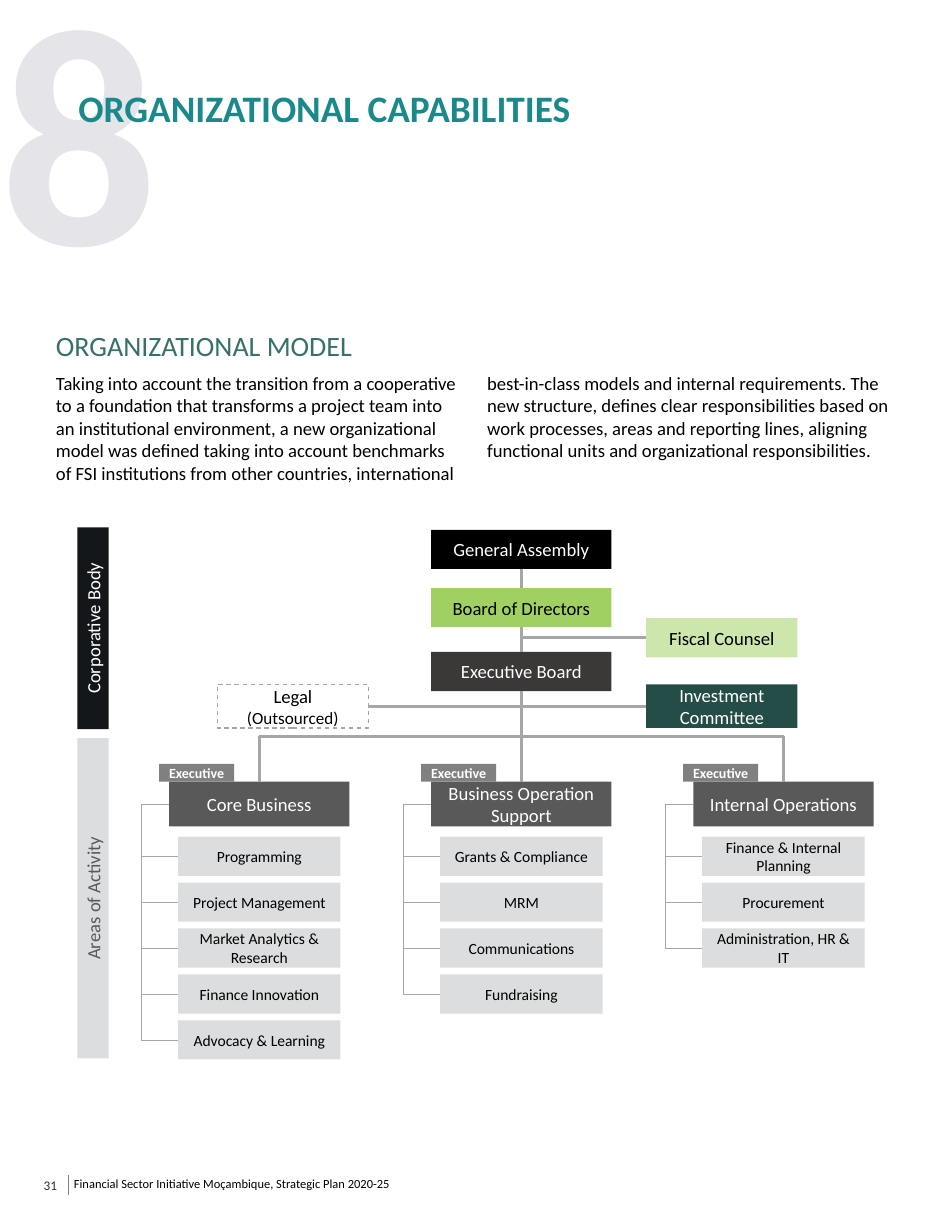
from lxml import etree
from pptx import Presentation
from pptx.dml.color import RGBColor
from pptx.enum.dml import MSO_LINE
from pptx.enum.shapes import MSO_CONNECTOR, MSO_SHAPE
from pptx.enum.text import MSO_ANCHOR, MSO_AUTO_SIZE, PP_ALIGN
from pptx.oxml.ns import qn
from pptx.util import Inches, Pt

STRAIGHT, ELBOW = MSO_CONNECTOR.STRAIGHT, MSO_CONNECTOR.ELBOW
TOP, MIDDLE = MSO_ANCHOR.TOP, MSO_ANCHOR.MIDDLE
LEFT, CENTER = PP_ALIGN.LEFT, PP_ALIGN.CENTER
WIDTH, HEIGHT = 8.5, 11
FONT, RULE = "Calibri", "A6A6A6"
BLACK, WHITE, PALE = "000000", "FFFFFF", "DCDDDE"
BOX_WIDTH, BOX_HEIGHT, SIDE_WIDTH = 1.61, 0.35, 1.35
COLUMN_STEP, ROW_STEP, UNIT_HEIGHT = 2.34, 0.41, 0.4

BODY = (
    "Taking into account the transition from a cooperative to a foundation that transforms "
    "a project team into an institutional environment, a new organizational model was defined "
    "taking into account benchmarks of FSI institutions from other countries, international "
    "best-in-class models and internal requirements. The new structure, defines clear "
    "responsibilities based on work processes, areas and reporting lines, aligning functional "
    "units and organizational responsibilities."
)
UNITS = [
    ("Core Business", ["Programming", "Project Management", "Market Analytics & Research",
                       "Finance Innovation", "Advocacy & Learning"]),
    ("Business Operation Support", ["Grants & Compliance", "MRM", "Communications", "Fundraising"]),
    ("Internal Operations", ["Finance & Internal Planning", "Procurement", "Administration, HR & IT"]),
]


def color(value):
    return RGBColor.from_string(value)


def write(shape, text, size, ink, bold=False, align=LEFT, anchor=TOP, margins=(0, 0, 0, 0)):
    frame = shape.text_frame
    frame.text = text
    frame.word_wrap = True
    frame.auto_size = MSO_AUTO_SIZE.NONE
    frame.vertical_anchor = anchor
    frame.margin_left, frame.margin_top, frame.margin_right, frame.margin_bottom = map(Inches, margins)
    para = frame.paragraphs[0]
    para.alignment = align
    for span in para.runs:
        span.font.name, span.font.size, span.font.bold = FONT, Pt(size), bold
        span.font.color.rgb = color(ink)
    return frame


def label(page, box, text, size, ink, **style):
    shape = page.shapes.add_textbox(*map(Inches, box))
    return write(shape, text, size, ink, **style)


def block(page, box, text, fill, ink=WHITE, size=12, bold=False, margins=(0.1, 0.05, 0.1, 0.05)):
    shape = page.shapes.add_shape(MSO_SHAPE.RECTANGLE, *map(Inches, box))
    shape.shadow.inherit = False
    shape.line.fill.background()
    if fill:
        shape.fill.solid()
        shape.fill.fore_color.rgb = color(fill)
    else:
        shape.fill.background()
    write(shape, text, size, ink, bold, CENTER, MIDDLE, margins)
    return shape


def link(page, kind, start, end, width=0, ink=RULE):
    line = page.shapes.add_connector(kind, *map(Inches, (*start, *end)))
    line.line.color.rgb = color(ink)
    line.line.width = Pt(width)
    etree.SubElement(line._element.spPr, qn("a:effectLst"))
    return line


def join(page, upper, lower):
    line = link(page, STRAIGHT, (0, 0), (1, 1))
    line.begin_connect(upper, 2)
    line.end_connect(lower, 0)


def drop(page, start, end, preset="bentConnector3"):
    across, down = end[0] - start[0], end[1] - start[1]
    middle_x, middle_y = start[0] + across / 2, start[1] + down / 2
    half = down / 2 if across < 0 else -down / 2
    line = link(page, ELBOW, (middle_x - half, middle_y - abs(across) / 2),
                (middle_x + half, middle_y + abs(across) / 2))
    properties = line._element.spPr
    properties.find(qn("a:xfrm")).set("rot", str((90 if across < 0 else 270) * 60000))
    properties.find(qn("a:prstGeom")).set("prst", preset)


def bracket(page, start, end, reach):
    line = link(page, ELBOW, start, end, 0.25)
    guides = line._element.spPr.find(qn("a:prstGeom")).get_or_add_avLst()
    share = round(-reach / (end[0] - start[0]) * 100000)
    etree.SubElement(guides, qn("a:gd"), name="adj1", fmla=f"val {share}")


def heading(page, box):
    frame = label(page, (0, -0.59, 3.85, 2.82), "8", 200, "797991", bold=True)
    tint = frame._txBody.find(".//" + qn("a:srgbClr"))
    etree.SubElement(tint, qn("a:alpha"), val="20000")
    title = page.shapes.title
    title.left, title.top, title.width, title.height = map(Inches, box)
    write(title, "ORGANIZATIONAL CAPABILITIES", 24, "1A898B", bold=True)
    page.shapes._spTree.append(title._element)


def introduction(page, box):
    left, top, width, height = box
    label(page, (left, top, width, 0.38), "ORGANIZATIONAL MODEL", 18, "377169")
    frame = label(page, (left, top + 0.39, width, height - 0.39), BODY, 12, BLACK)
    settings = frame._txBody.bodyPr
    settings.set("numCol", "2")
    settings.set("spcCol", str(Inches(0.2)))


def side_bars(page, box):
    left, top, width, height = box
    for text, offset, length, fill, ink in (
        ("Corporative Body", 0, 1.8, "14171A", WHITE),
        ("Areas of Activity", 1.88, height - 1.88, PALE, "595959"),
    ):
        bar = block(page, (left, top + offset, width, length), text, fill, ink)
        bar.text_frame._txBody.bodyPr.set("vert", "vert270")


def unit(page, box, name, areas):
    left, top, width, height = box
    head = block(page, (left, top, width, height), name, "595959")
    area_left, start = left + 0.08, (left, top + height / 2)
    for row, area in enumerate(areas):
        area_top = top + 0.49 + row * ROW_STEP
        block(page, (area_left, area_top, 1.45, BOX_HEIGHT), area, PALE, BLACK, 10)
        bracket(page, start, (area_left, area_top + BOX_HEIGHT / 2), 0.25)
    block(page, (left - 0.09, top - 0.16, 0.67, 0.16), "Executive", "808080", size=9,
          bold=True, margins=(0.04,) * 4)
    return head


def chart(page, box):
    left, top, width, height = box
    center = left + width / 2
    middle_left, right = center - BOX_WIDTH / 2, left + width - 2.03
    assembly, directors, executive = [
        block(page, (middle_left, top + offset, BOX_WIDTH, BOX_HEIGHT), text, fill, ink)
        for text, offset, fill, ink in (
            ("General Assembly", 0.02, BLACK, WHITE),
            ("Board of Directors", 0.54, "A1D062", BLACK),
            ("Executive Board", 1.11, "3B3838", WHITE),
        )
    ]
    block(page, (right, top + 0.81, SIDE_WIDTH, BOX_HEIGHT), "Fiscal Counsel", "CDE6AC", BLACK)
    block(page, (right, top + 1.4, SIDE_WIDTH, 0.39), "Investment Committee", "254D47")
    legal_left = left + 0.43
    legal = block(page, (legal_left, top + 1.4, SIDE_WIDTH, 0.39), "Legal (Outsourced)", None, BLACK)
    legal.text_frame.paragraphs[0].runs[0].text = "Legal "
    outsourced = legal.text_frame.paragraphs[0].add_run()
    outsourced.text = "(Outsourced)"
    outsourced.font.name, outsourced.font.size = FONT, Pt(11)
    outsourced.font.color.rgb = color(BLACK)
    legal.line.color.rgb = color(RULE)
    legal.line.width = Pt(0)
    legal.line.dash_style = MSO_LINE.DASH

    unit_top, board_bottom = top + 2.27, top + 1.11 + BOX_HEIGHT
    heads = [
        unit(page, (left + column * COLUMN_STEP, unit_top, BOX_WIDTH, UNIT_HEIGHT), name, areas)
        for column, (name, areas) in enumerate(UNITS)
    ]
    join(page, assembly, directors)
    join(page, directors, executive)
    join(page, executive, heads[1])
    trunk, side_middle = (center, board_bottom), top + 1.6
    for step in (-COLUMN_STEP, COLUMN_STEP):
        drop(page, trunk, (center + step, unit_top))
    for side in (legal_left + SIDE_WIDTH, right):
        drop(page, trunk, (side, side_middle), "bentConnector2")
    drop(page, (center, top + 0.54 + BOX_HEIGHT), (right, top + 0.98), "bentConnector2")


def footer(page, box):
    left, top, width, height = box
    link(page, STRAIGHT, (left + 0.22, top + 0.04), (left + 0.22, top + 0.22), 0.5, "808080")
    label(page, (left, top, 0.16, height), "31", 8.5, "2E2E38", anchor=MIDDLE)
    label(page, (left + 0.27, top, width - 0.27, height),
          "Financial Sector Initiative Moçambique, Strategic Plan 2020-25", 8, BLACK,
          margins=(0, 0.05, 0.1, 0.05))


def main():
    deck = Presentation()
    deck.slide_width, deck.slide_height = Inches(WIDTH), Inches(HEIGHT)
    page = deck.slides.add_slide(deck.slide_layouts[5])
    footer(page, (0.39, 0.95 * HEIGHT, 3.68, 0.26))
    side_bars(page, (0.69, 4.71, 0.28, 4.74))
    chart(page, (1.51, 4.71, 2 * COLUMN_STEP + BOX_WIDTH, 4.74))
    introduction(page, (0.5, 2.93, 7.5, 1.45))
    heading(page, (0.7, 0.76, 7.41, 0.89))
    deck.save("out.pptx")


if __name__ == "__main__":
    main()
